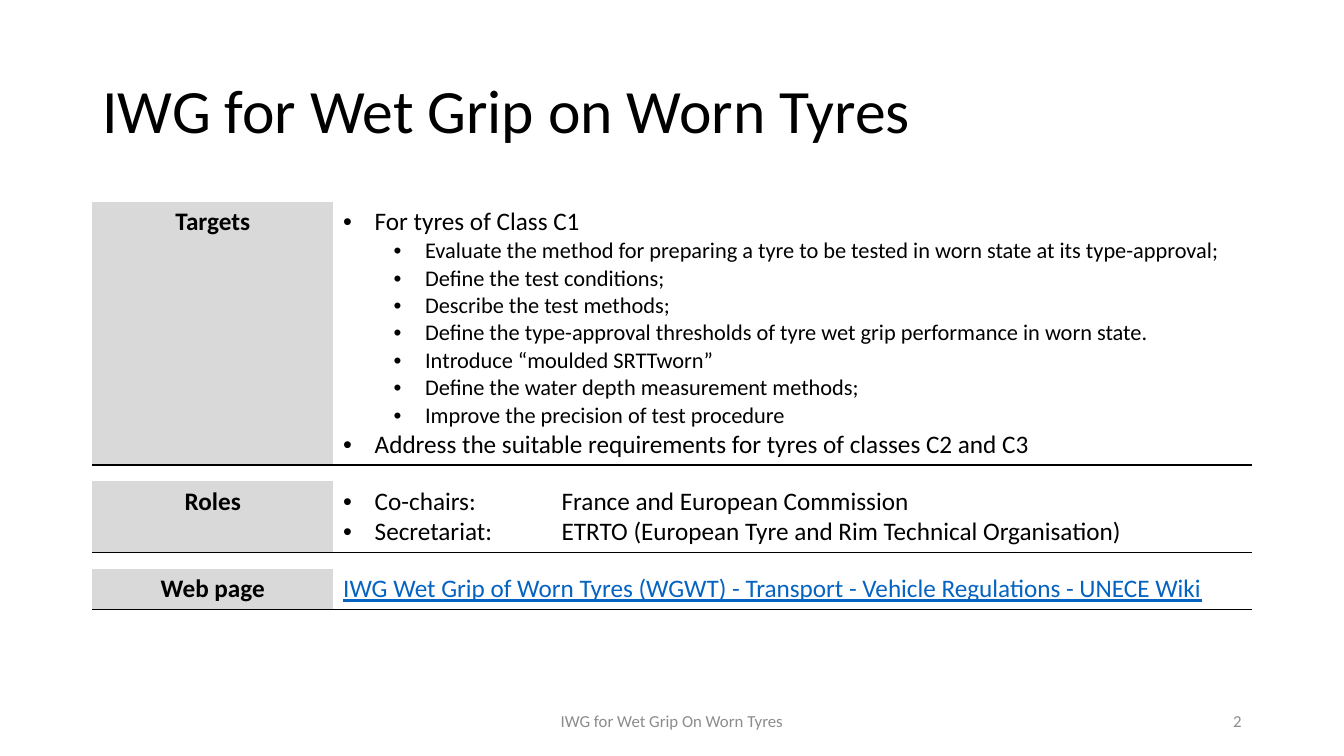
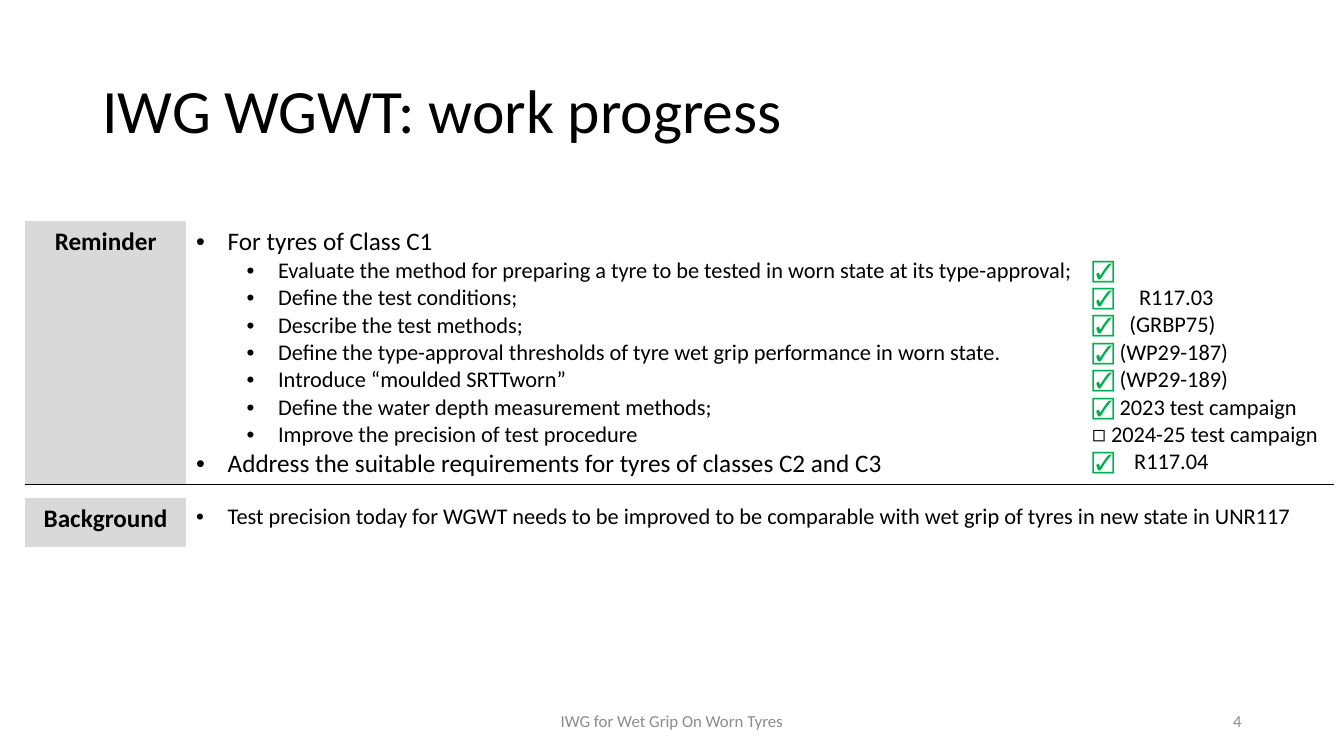
"""Builds two slides on the working group for wet grip on worn tyres."""
from lxml.etree import SubElement
from pptx import Presentation
from pptx.dml.color import RGBColor
from pptx.enum.text import MSO_ANCHOR, MSO_AUTO_SIZE, PP_ALIGN
from pptx.oxml.ns import qn
from pptx.util import Pt

BLACK, GREY, FOOTER_GREY = "000000", "D9D9D9", "8C8C8C"
GREEN, LINK_BLUE = "00B050", "0563C1"
PLAIN_TABLE = "{2D5ABB26-0587-4C30-8999-92F81FD0307C}"
CHECK = "☑"
FOOTER = "IWG for Wet Grip On Worn Tyres"

STYLES = {
    "title": {"size": 44, "align": PP_ALIGN.LEFT, "spacing": 0.9},
    "label": {"size": 18, "bold": True, "align": PP_ALIGN.CENTER},
    "bullet": {"size": 18, "indent": 22.5},
    "small bullet": {"size": 16, "indent": 22.5},
    "sub-bullet": {"size": 16, "indent": 58.5},
    "status": {"size": 16},
    "link": {"size": 18, "underline": True, "colour": LINK_BLUE},
    "footer": {"size": 12, "align": PP_ALIGN.CENTER, "colour": FOOTER_GREY},
    "number": {"size": 12, "align": PP_ALIGN.RIGHT, "colour": FOOTER_GREY},
}

TARGETS = [
    ("bullet", "For tyres of Class C1"),
    ("sub-bullet", "Evaluate the method for preparing a tyre to be tested in worn state at its type-approval;"),
    ("sub-bullet", "Define the test conditions;"),
    ("sub-bullet", "Describe the test methods;"),
    ("sub-bullet", "Define the type-approval thresholds of tyre wet grip performance in worn state."),
    ("sub-bullet", "Introduce “moulded SRTTworn”"),
    ("sub-bullet", "Define the water depth measurement methods;"),
    ("sub-bullet", "Improve the precision of test procedure"),
    ("bullet", "Address the suitable requirements for tyres of classes C2 and C3"),
]
ROLES = [
    ("bullet", "Co-chairs:\tFrance and European Commission", 156),
    ("bullet", "Secretariat:\tETRTO (European Tyre and Rim Technical Organisation)", 156),
]
WEB_PAGE = [("link", "IWG Wet Grip of Worn Tyres (WGWT) - Transport - Vehicle Regulations - UNECE Wiki")]
PROGRESS = [
    ("status", "☑"),
    ("status", "☑\tR117.03", 33.5),
    ("status", "☑\t(GRBP75)", 26.5),
    ("status", "☑ (WP29-187)"),
    ("status", "☑ (WP29-189)"),
    ("status", "☑ 2023 test campaign"),
    ("status", "◻ 2024-25 test campaign"),
    ("status", "☑\tR117.04", 30),
]
BACKGROUND = [("small bullet", "Test precision today for WGWT needs to be improved to be comparable "
               "with wet grip of tyres in new state in UNR117")]

SLIDES = [
    {"title": "IWG for Wet Grip on Worn Tyres", "number": "2",
     "left": 66, "top": 144, "columns": [172, 656], "gap": 11.5, "right_margin": 7.2,
     "rows": [(188, True, "Targets", [TARGETS]),
              (51, True, "Roles", [ROLES]),
              (29, True, "Web page", [WEB_PAGE])]},
    {"title": "IWG WGWT: work progress", "number": "4",
     "left": 18, "top": 158, "columns": [115, 640, 180], "gap": 10, "right_margin": 0,
     "rows": [(188, True, "Reminder", [TARGETS, PROGRESS]),
              (34.5, False, "Background", [BACKGROUND])]},
]


def add_child(parent, tag, **attributes):
    return SubElement(parent, qn(tag), {name: str(value) for name, value in attributes.items()})


def write(frame, lines):
    for index, (style_name, text, *tab) in enumerate(lines):
        style = STYLES[style_name]
        para = frame.add_paragraph() if index else frame.paragraphs[0]
        para.alignment = style.get("align")
        para.line_spacing = style.get("spacing")
        properties = para._p.get_or_add_pPr()
        if "indent" in style:
            properties.set("marL", str(Pt(style["indent"])))
            properties.set("indent", str(Pt(-22.5)))
            add_child(properties, "a:buFont", typeface="Arial")
            add_child(properties, "a:buChar", char="•")
        for position in tab:
            tabs = add_child(properties, "a:tabLst")
            add_child(tabs, "a:tab", pos=Pt(position), algn="l")
        before, check, rest = text.rpartition(CHECK)
        for piece, colour in ((check, GREEN), (rest, style.get("colour", BLACK))):
            if piece:
                span = para.add_run()
                span.text = piece
                values = {"name": "Calibri", "size": Pt(style["size"]),
                          "bold": style.get("bold", False), "underline": style.get("underline")}
                for name, value in values.items():
                    setattr(span.font, name, value)
                span.font.color.rgb = RGBColor.from_string(colour)


deck = Presentation()
deck.slide_width, deck.slide_height = Pt(960), Pt(540)

for page in SLIDES:
    slide = deck.slides.add_slide(deck.slide_layouts[5])
    title = slide.shapes.title
    footer = slide.shapes.add_textbox(Pt(318), Pt(500.5), Pt(324), Pt(28.5))
    number = slide.shapes.add_textbox(Pt(678), Pt(500.5), Pt(216), Pt(28.5))
    for name, value in {"left": 66, "top": 28.75, "width": 828, "height": 104.5}.items():
        setattr(title, name, Pt(value))
    for box, style_name, text in ((title, "title", page["title"]),
                                  (footer, "footer", FOOTER),
                                  (number, "number", page["number"])):
        frame_format = {"word_wrap": True, "auto_size": MSO_AUTO_SIZE.NONE,
                        "vertical_anchor": MSO_ANCHOR.MIDDLE}
        for name, value in frame_format.items():
            setattr(box.text_frame, name, value)
        write(box.text_frame, [(style_name, text)])

    row_count = 2 * len(page["rows"]) - 1
    heights = [page["gap"]] * row_count
    heights[::2] = [row[0] for row in page["rows"]]
    table = slide.shapes.add_table(row_count, len(page["columns"]), Pt(page["left"]), Pt(page["top"]),
                                   Pt(sum(page["columns"])), Pt(sum(heights))).table
    table.first_row = table.horz_banding = False
    table._tbl.tblPr.find(qn("a:tableStyleId")).text = PLAIN_TABLE
    for column, width in zip(table.columns, page["columns"]):
        column.width = Pt(width)
    for row, height in zip(table.rows, heights):
        row.height = Pt(height)

    for row_index in range(row_count):
        is_gap = row_index % 2 == 1
        height, ruled, label, contents = page["rows"][row_index // 2]
        if not is_gap and len(contents) < len(page["columns"]) - 1:
            table.cell(row_index, 1).merge(table.cell(row_index, len(page["columns"]) - 1))
        for column_index, cell in enumerate(table.rows[row_index].cells):
            if ruled and not is_gap:
                line = add_child(cell._tc.get_or_add_tcPr(), "a:lnB", w=Pt(1))
                add_child(add_child(line, "a:solidFill"), "a:srgbClr", val=BLACK)
            if is_gap:
                cell.margin_top = cell.margin_bottom = 0
                add_child(cell.text_frame.paragraphs[0]._p, "a:endParaRPr", sz=100)
            if column_index == 0 and not is_gap:
                cell.fill.solid()
                cell.fill.fore_color.rgb = RGBColor.from_string(GREY)
                write(cell.text_frame, [("label", label)])
                continue
            cell.fill.background()
            if not is_gap and column_index <= len(contents):
                lines = contents[column_index - 1]
                cell.margin_right = Pt(page["right_margin"])
                cell.margin_top = Pt(25.5 if lines is PROGRESS else 3.6)
                write(cell.text_frame, lines)

deck.save("out.pptx")
